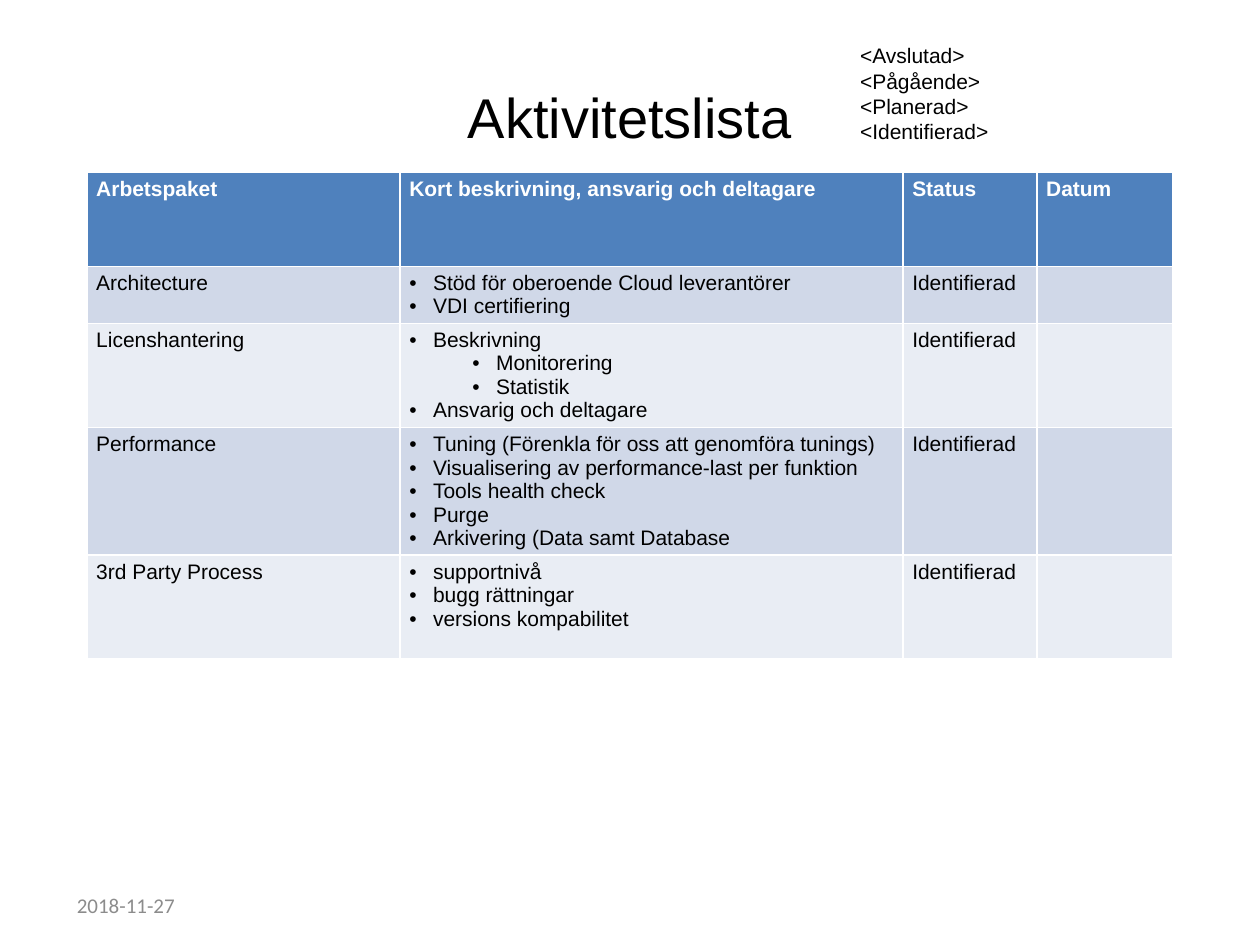
from lxml.etree import SubElement
from pptx import Presentation
from pptx.dml.color import RGBColor
from pptx.enum.text import MSO_ANCHOR, PP_ALIGN
from pptx.oxml.ns import qn
from pptx.util import Cm, Pt

BLACK = RGBColor(0x00, 0x00, 0x00)
WHITE = RGBColor(0xFF, 0xFF, 0xFF)
GRAY = RGBColor(0x8C, 0x8C, 0x8C)
HEADER_BLUE = RGBColor(0x4F, 0x81, 0xBD)
BAND_DARK = RGBColor(0xD0, 0xD8, 0xE8)
BAND_LIGHT = RGBColor(0xE9, 0xED, 0xF4)

HEADERS = ["Arbetspaket", "Kort beskrivning, ansvarig och deltagare", "Status", "Datum"]
PACKAGES = [
    ("Architecture", [(0, "Stöd för oberoende Cloud leverantörer"), (0, "VDI certifiering")]),
    ("Licenshantering", [(0, "Beskrivning"), (1, "Monitorering"), (1, "Statistik"),
                         (0, "Ansvarig och deltagare")]),
    ("Performance", [(0, "Tuning (Förenkla för oss att genomföra tunings)"),
                     (0, "Visualisering av performance-last per funktion"),
                     (0, "Tools health check"), (0, "Purge"),
                     (0, "Arkivering (Data samt Database")]),
    ("3rd Party Process", [(0, "supportnivå"), (0, "bugg rättningar"),
                           (0, "versions kompabilitet")]),
]
COLUMN_WIDTHS = [6.31, 10.14, 2.7, 2.74]
ROW_HEIGHTS = [1.9, 1.11, 2.1, 2.56, 2.08]


def style_text(paragraph, size=12, color=BLACK, name="Arial", bold=False):
    font = paragraph.font
    font.name = name
    font.size = Pt(size)
    font.bold = bold
    font.color.rgb = color


def add_bullet(paragraph, level):
    paragraph.level = level
    properties = paragraph._p.get_or_add_pPr()
    properties.set("marL", str(Cm(0.48 + 1.27 * level)))
    properties.set("indent", str(-Cm(0.48)))
    SubElement(properties, qn("a:buFont"), typeface="Arial")
    SubElement(properties, qn("a:buChar"), char="•")


presentation = Presentation()
presentation.slide_width = Cm(25.4)
presentation.slide_height = Cm(19.05)
slide = presentation.slides.add_slide(presentation.slide_layouts[5])

title = slide.shapes.title
title.left, title.top, title.width, title.height = Cm(1.27), Cm(0.76), Cm(22.86), Cm(3.18)
title.text_frame.text = "Aktivitetslista"
title.text_frame.vertical_anchor = MSO_ANCHOR.MIDDLE
title.text_frame.paragraphs[0].alignment = PP_ALIGN.CENTER
style_text(title.text_frame.paragraphs[0], size=32)

table = slide.shapes.add_table(
    len(ROW_HEIGHTS), len(COLUMN_WIDTHS),
    Cm(1.75), Cm(3.47), Cm(sum(COLUMN_WIDTHS)), Cm(sum(ROW_HEIGHTS))).table
for column, width in zip(table.columns, COLUMN_WIDTHS):
    column.width = Cm(width)
for row, height in zip(table.rows, ROW_HEIGHTS):
    row.height = Cm(height)

contents = [HEADERS]
for package, activities in PACKAGES:
    description = "\n".join(text for level, text in activities)
    contents.append([package, description, "Identifierad", ""])

for row_index, texts in enumerate(contents):
    is_header = row_index == 0
    band = BAND_DARK if row_index % 2 else BAND_LIGHT
    for column_index, text in enumerate(texts):
        cell = table.cell(row_index, column_index)
        cell.margin_left = cell.margin_right = Cm(0.19)
        cell.margin_top = cell.margin_bottom = Cm(0.1)
        cell.fill.solid()
        cell.fill.fore_color.rgb = HEADER_BLUE if is_header else band
        cell.text_frame.text = text
        paragraphs = cell.text_frame.paragraphs
        if column_index == 1 and not is_header:
            for paragraph, (level, activity) in zip(paragraphs, PACKAGES[row_index - 1][1]):
                add_bullet(paragraph, level)
        for paragraph in paragraphs:
            style_text(paragraph, color=WHITE if is_header else BLACK, bold=is_header)

legend = slide.shapes.add_textbox(Cm(17.09), Cm(0.74), Cm(3.12), Cm(2.31))
legend.text_frame.word_wrap = False
legend.text_frame.text = "<Avslutad>\n<Pågående>\n<Planerad>\n<Identifierad>"
for paragraph in legend.text_frame.paragraphs:
    style_text(paragraph)

date = slide.shapes.add_textbox(Cm(1.3), Cm(17.73), Cm(5.92), Cm(1.02))
date.text_frame.word_wrap = True
date.text_frame.vertical_anchor = MSO_ANCHOR.MIDDLE
date.text_frame.text = "2018-11-27"
style_text(date.text_frame.paragraphs[0], color=GRAY, name="Calibri")

presentation.save("out.pptx")
